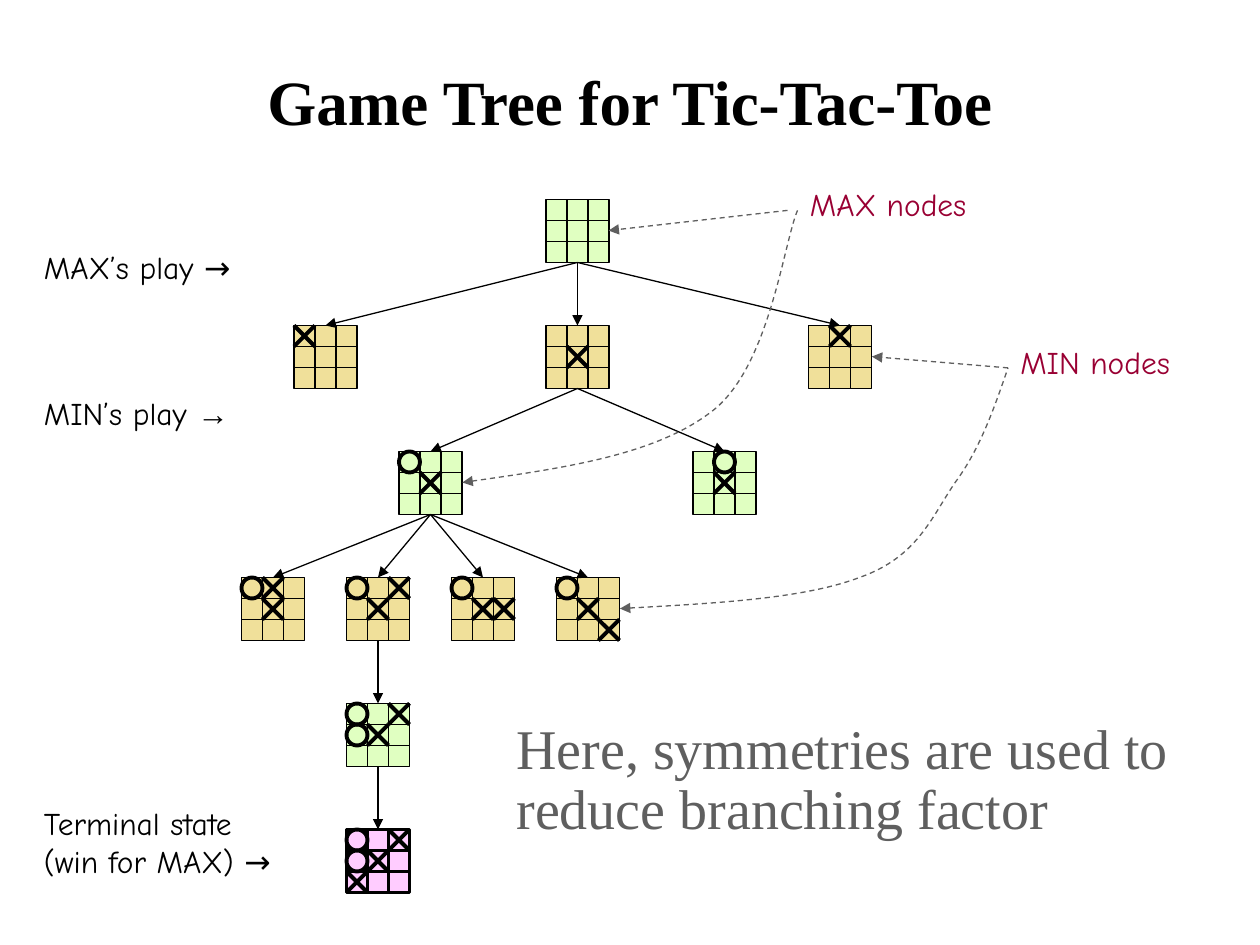
from lxml.etree import SubElement
from pptx import Presentation
from pptx.dml.color import RGBColor
from pptx.enum.dml import MSO_LINE
from pptx.enum.shapes import MSO_CONNECTOR, MSO_SHAPE
from pptx.enum.text import MSO_ANCHOR, PP_ALIGN
from pptx.oxml.ns import qn
from pptx.util import Inches, Pt

COLORS = {
    "ink": "000000",
    "max": "E0FFC1",
    "min": "F0E09A",
    "terminal": "FFCCFF",
    "label": "990033",
    "gray": "5F5F5F",
}
UNIT = 1 / 12
CELL = 2 * UNIT
BOARD = 3 * CELL
TOP = 19 * UNIT

# name: (left in twelfths of an inch, level, player, marks row by row)
BOARDS = {
    "win": (33, 5, "terminal", "O.X OX. X.."),
    "root": (52, 0, "max", "... ... ..."),
    "corner": (28, 1, "min", "X.. ... ..."),
    "edge": (77, 1, "min", ".X. ... ..."),
    "center": (52, 1, "min", "... .X. ..."),
    "reply corner": (38, 2, "max", "O.. .X. ..."),
    "reply edge": (66, 2, "max", ".O. .X. ..."),
    "top middle": (23, 3, "min", "OX. .X. ..."),
    "top right": (33, 3, "min", "O.X .X. ..."),
    "bottom right": (53, 3, "min", "O.. .X. ..X"),
    "middle right": (43, 3, "min", "O.. .XX ..."),
    "second reply": (33, 4, "max", "O.X OX. ..."),
}
MOVES = {
    "root": ["corner", "center", "edge"],
    "center": ["reply corner", "reply edge"],
    "reply corner": ["top right", "top middle", "middle right", "bottom right"],
    "top right": ["second reply"],
    "second reply": ["win"],
}


def board_origin(name):
    left, level = BOARDS[name][:2]
    return left * UNIT, TOP + level


class TreeSlide:
    """Holds the fonts and the slide that is being drawn."""

    serif = "Times New Roman"
    hand = "Comic Neue"

    def __init__(self, presentation):
        self.shapes = presentation.slides.add_slide(presentation.slide_layouts[6]).shapes

    def style_line(self, line, width, color="ink", dashed=False, arrow=None):
        """Style an outline; arrow is None, "headEnd" or "tailEnd"."""
        line.color.rgb = RGBColor.from_string(COLORS[color])
        line.width = Pt(width)
        if dashed:
            line.dash_style = MSO_LINE.DASH
        if arrow:
            SubElement(line._get_or_add_ln(), qn(f"a:{arrow}"), type="triangle")

    def shape(self, kind, left, top, size, fill, width):
        shape = self.shapes.add_shape(kind, *map(Inches, (left, top, size, size)))
        shape.shadow.inherit = False
        if fill:
            shape.fill.solid()
            shape.fill.fore_color.rgb = RGBColor.from_string(COLORS[fill])
        else:
            shape.fill.background()
        self.style_line(shape.line, width)

    def line(self, start, end, width=0.75, **style):
        connector = self.shapes.add_connector(
            MSO_CONNECTOR.STRAIGHT, *map(Inches, (*start, *end)))
        self.style_line(connector.line, width, **style)
        SubElement(connector._element.spPr, qn("a:effectLst"))

    def curve(self, *points):
        """Dashed Bezier curve, arrowhead at its start; three points per segment follow it."""
        start, *controls = [(Inches(x), Inches(y)) for x, y in points]
        builder = self.shapes.build_freeform(*start)
        builder.add_line_segments(controls, close=False)
        shape = builder.convert_to_shape()
        shape.shadow.inherit = False
        shape.fill.background()
        self.style_line(shape.line, 0.75, "gray", dashed=True, arrow="headEnd")
        steps = list(shape._element.iter(qn("a:lnTo")))
        for first in range(0, len(steps), 3):
            bezier = steps[first]
            bezier.tag = qn("a:cubicBezTo")
            for step in steps[first + 1:first + 3]:
                bezier.append(step[0])
                step.getparent().remove(step)

    def run(self, paragraph, text, size=18, font=hand, color="ink", bold=False):
        run = paragraph.add_run()
        run.text = text
        run.font.size = Pt(size)
        run.font.name = font
        run.font.bold = bold
        run.font.color.rgb = RGBColor.from_string(COLORS[color])

    def text(self, text, left, top, width, height, wrap=False, align=PP_ALIGN.LEFT,
             anchor=MSO_ANCHOR.TOP, spacing=None, **font):
        box = self.shapes.add_textbox(*map(Inches, (left, top, width, height)))
        frame = box.text_frame
        frame.word_wrap = wrap
        frame.vertical_anchor = anchor
        paragraph = frame.paragraphs[0]
        paragraph.alignment = align
        if spacing:
            paragraph.line_spacing = spacing
        for number, row in enumerate(text.split("\n")):
            if number:
                paragraph.add_line_break()
            self.run(paragraph, row, **font)
        return paragraph

    def mark(self, symbol, left, top, fill):
        right, bottom = left + CELL, top + CELL
        if symbol == "X":
            self.line((left, top), (right, bottom), 2.25)
            self.line((left, bottom), (right, top), 2.25)
        elif symbol == "O":
            self.shape(MSO_SHAPE.OVAL, left, top, CELL, fill, 2.25)

    def board(self, name):
        left, top = board_origin(name)
        player, marks = BOARDS[name][2:]
        width = 1.5 if player == "terminal" else 0.75
        self.shape(MSO_SHAPE.RECTANGLE, left, top, BOARD, player, width)
        for offset in (CELL, 2 * CELL):
            self.line((left, top + offset), (left + BOARD, top + offset), width)
            self.line((left + offset, top), (left + offset, top + BOARD), width)
        fill = None if player == "max" else player
        for row, symbols in enumerate(marks.split()):
            for column, symbol in enumerate(symbols):
                self.mark(symbol, left + column * CELL, top + row * CELL, fill)

    def move(self, parent, child):
        (start_x, start_y), (end_x, end_y) = board_origin(parent), board_origin(child)
        self.line((start_x + BOARD / 2, start_y + BOARD), (end_x + BOARD / 2, end_y),
                  arrow="tailEnd")


def main():
    presentation = Presentation()
    presentation.slide_width = Inches(10)
    presentation.slide_height = Inches(7.5)
    slide = TreeSlide(presentation)

    slide.text("Game Tree for Tic-Tac-Toe", 0.5, 0.17, 9, 1.25, wrap=True,
               align=PP_ALIGN.CENTER, anchor=MSO_ANCHOR.MIDDLE,
               size=36, font=slide.serif, bold=True)
    for name in BOARDS:
        slide.board(name)
    for parent, children in MOVES.items():
        for child in children:
            slide.move(parent, child)

    slide.text("MAX’s play →", 0.25, 1.92, 1.81, 0.4)
    min_play = slide.text("MIN’s play ", 0.25, 3.08, 1.78, 0.4)
    slide.run(min_play, "→", font="Arial")
    slide.text("Terminal state\n(win for MAX) →", 0.25, 6.33, 2.19, 0.7)
    slide.text("Here, symmetries are used to reduce branching factor", 4, 5.67, 5.5, 1.08,
               wrap=True, spacing=0.9, size=32, font=slide.serif, color="gray")

    pointer = {"color": "gray", "dashed": True, "arrow": "tailEnd"}
    slide.text("MIN nodes", 8, 2.67, 1.5, 0.4, color="label")
    slide.curve((4.92, 4.83),
                (5.65, 4.79), (6.39, 4.75), (6.83, 4.58),
                (7.28, 4.42), (7.39, 4.11), (7.58, 3.83),
                (7.78, 3.56), (7.89, 3.24), (8, 2.92))
    slide.line((8, 2.92), (6.92, 2.83), **pointer)
    slide.text("MAX nodes", 6.33, 1.42, 1.53, 0.4, color="label")
    slide.curve((3.67, 3.83),
                (4.44, 3.72), (5.22, 3.61), (5.67, 3.25),
                (6.11, 2.89), (6.22, 1.93), (6.33, 1.67))
    slide.line((6.25, 1.67), (4.83, 1.83), **pointer)

    presentation.save("out.pptx")


if __name__ == "__main__":
    main()
